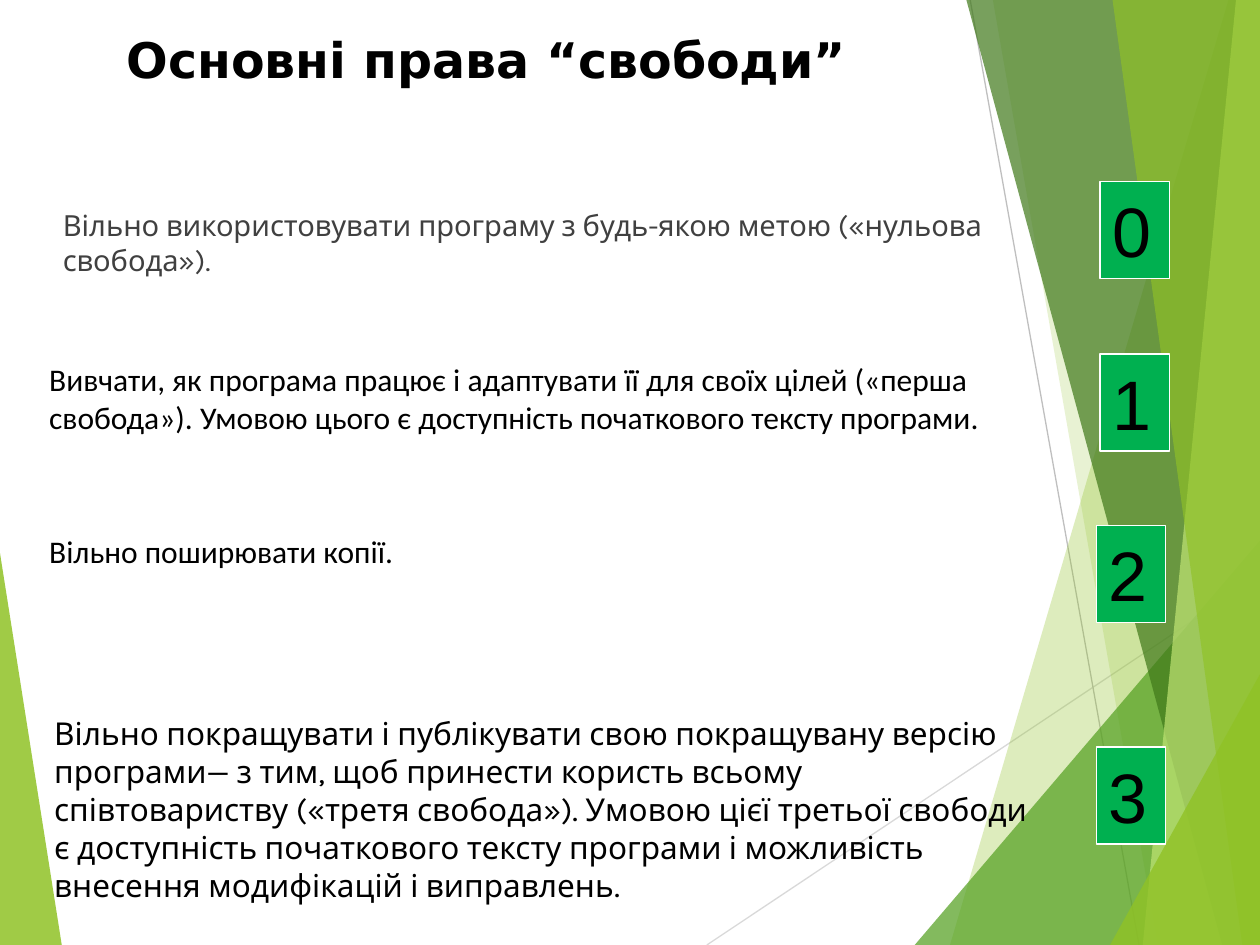
from lxml.etree import SubElement
from pptx import Presentation
from pptx.dml.color import RGBColor
from pptx.enum.shapes import MSO_CONNECTOR, MSO_SHAPE
from pptx.enum.text import MSO_ANCHOR, PP_ALIGN
from pptx.oxml.ns import qn
from pptx.util import Inches, Pt

# The slide is a grid of 100 columns and 75 rows
CELL = Inches(0.1)
COLS, ROWS = 100, 75


def grid(*vals):
    return [round(v * CELL) for v in vals]


def paint(fmt, hue, alpha=100):
    fmt.solid()
    fmt.fore_color.rgb = RGBColor.from_string(hue)
    if alpha < 100:
        node = fmt._xPr.find(qn("a:solidFill"))[0]
        SubElement(node, qn("a:alpha"), val=str(alpha * 1000))


def write(shape, text, font="Calibri", size=18, hue="000000", bold=False,
          gap=0, side=0.1, anchor=MSO_ANCHOR.TOP):
    frame = shape.text_frame
    frame.word_wrap = True
    frame.vertical_anchor = anchor
    frame.margin_left = frame.margin_right = Inches(side)
    frame.margin_top = frame.margin_bottom = Inches(0.05)
    para = frame.paragraphs[0]
    para.alignment = PP_ALIGN.LEFT
    para.space_before = para.space_after = Pt(gap)
    run = para.add_run()
    run.text = text
    run.font.name, run.font.size, run.font.bold = font, Pt(size), bold
    run.font.color.rgb = RGBColor.from_string(hue)


def facet(slide, box, pts, hue, alpha):
    left, top = box[:2]
    pts = [grid(left + x, top + y) for x, y in pts]
    form = slide.shapes.build_freeform(*pts[0], scale=1)
    form.add_line_segments(pts[1:], close=True)
    shape = form.convert_to_shape()
    shape.shadow.inherit = False
    paint(shape.fill, hue, alpha)
    shape.line.fill.background()


def ray(slide, ends, hue):
    line = slide.shapes.add_connector(MSO_CONNECTOR.STRAIGHT, *grid(*ends))
    paint(line.line.fill, hue)
    line.line.width = Pt(0.75)
    SubElement(line._element.spPr, qn("a:effectLst"))


def backdrop(slide, box):
    left, top, wide, high = box
    # Left wedge and thin rays
    facet(slide, box, [(0, 43.9), (4.9, high), (0, high)], "90C226", 85)
    ray(slide, (left + 56.1, top + high, left + wide, top + 45.7), "D9D9D9")
    ray(slide, (left + 77, top, left + 90.4, top + high), "BFBFBF")

    # Right bands: top edge x, bottom edge x, colour, opacity
    def band(up, down, hue, alpha):
        pts = [(up, 0), (down, high), (wide, high), (wide, 0)]
        facet(slide, box, pts, hue, alpha)

    # Right corners: bottom edge x, right edge y, colour, opacity
    def corner(down, side, hue, alpha):
        pts = [(down, high), (wide, side), (wide, high)]
        facet(slide, box, pts, hue, alpha)

    band(97.5, 75.4, "90C226", 30)
    band(78.8, 91.9, "90C226", 20)
    corner(72.6, 42.9, "54A021", 72)
    band(76.7, 97, "3F7819", 70)
    band(98.1, 90.7, "C0E474", 70)
    band(88.3, 98.6, "90C226", 65)
    corner(88.1, 53.5, "90C226", 80)


def label(slide, box, text, **style):
    write(slide.shapes.add_textbox(*grid(*box)), text, **style)


def badge(slide, box, text):
    shape = slide.shapes.add_shape(MSO_SHAPE.RECTANGLE, *grid(*box))
    shape.shadow.inherit = False
    paint(shape.fill, "00B050")
    paint(shape.line.fill, "FFFFFF")
    shape.line.width = Pt(0.75)
    write(shape, text, font="Arial", size=40)


# Each right: text box, badge corner, text, format
RIGHTS = [
    ((4, 16, 78.8, 8.2), (87.3, 14.4),
     "Вільно використовувати програму з будь-якою метою («нульова свобода»).",
     dict(font="Karla", size=16.6, hue="404040", side=0.1)),
    ((3.9, 28.1, 81.2, 6.8), (87.3, 28.1),
     "Вивчати, як програма працює і адаптувати її для своїх цілей («перша "
     "свобода»). Умовою цього є доступність початкового тексту програми.",
     dict(side=0)),
    ((3.9, 41.7, 81.2, 7.7), (87, 41.7), "Вільно поширювати копії.",
     dict(side=0)),
    ((4.3, 56.2, 78.4, 18.8), (87, 59.3),
     "Вільно покращувати і публікувати свою покращувану версію програми— "
     "з тим, щоб принести користь всьому співтовариству («третя свобода»). "
     "Умовою цієї третьої свободи є доступність початкового тексту програми "
     "і можливість внесення модифікацій і виправлень.",
     dict(font="Karla", side=0)),
]


def main():
    deck = Presentation()
    deck.slide_width, deck.slide_height = grid(COLS, ROWS)
    slide = deck.slides.add_slide(deck.slide_layouts[6])
    backdrop(slide, (0, 0, COLS, ROWS))
    label(slide, (9.1, 2.9, 68.6, 4.6), "Основні права “свободи”",
          font="DejaVu Sans", size=28, bold=True, anchor=MSO_ANCHOR.BOTTOM)
    for num, (box, spot, text, style) in enumerate(RIGHTS):
        label(slide, box, text, gap=15, **style)
        badge(slide, (*spot, 5.5, 7.7), str(num))
    deck.save("out.pptx")


if __name__ == "__main__":
    main()
